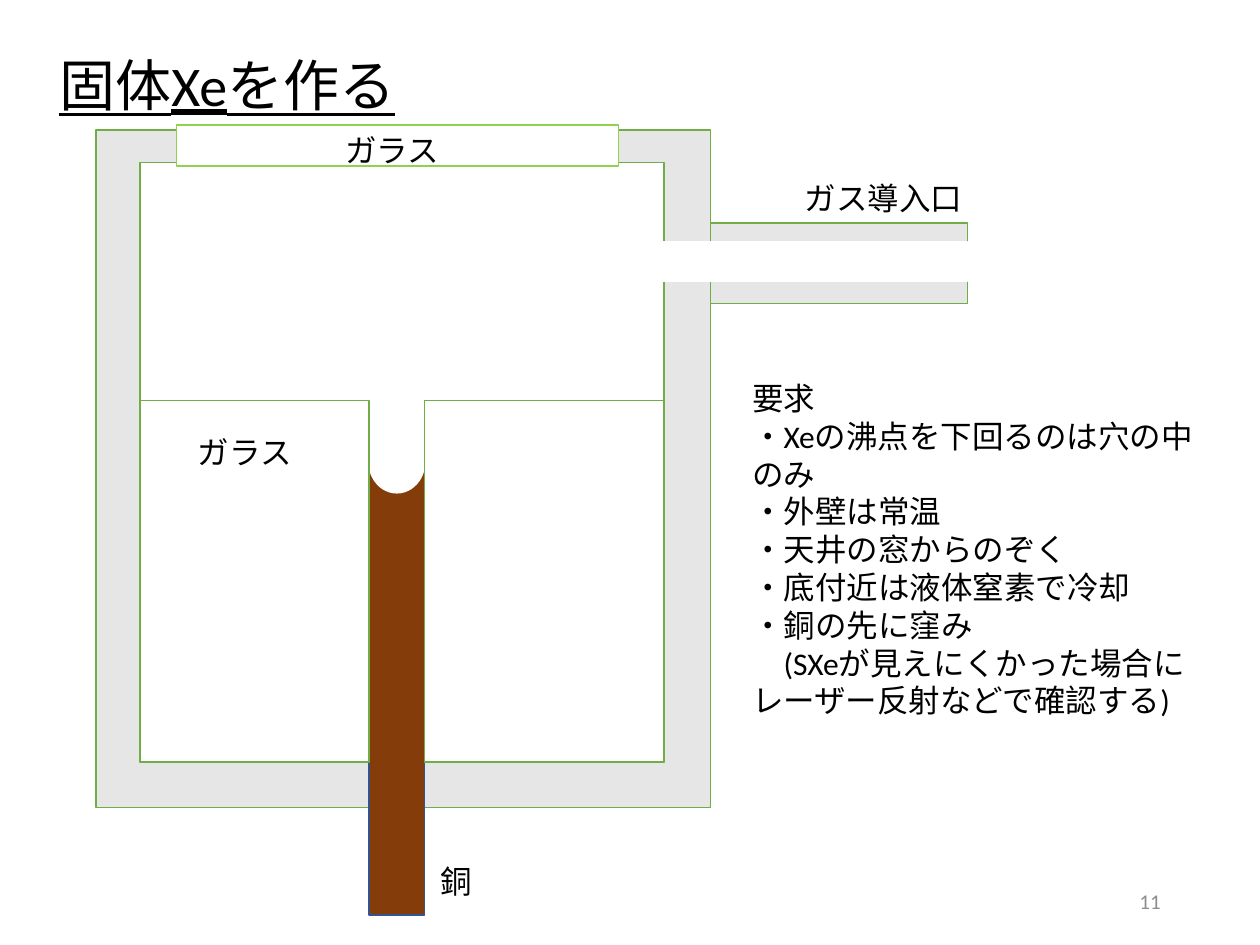
from typing import NamedTuple

from pptx import Presentation
from pptx.dml.color import RGBColor as Rgb
from pptx.enum.shapes import MSO_SHAPE as Kind
from pptx.enum.text import MSO_ANCHOR as Anchor, PP_ALIGN as Align
from pptx.util import Inches, Pt

HUES = {
    "wall": "E7E6E6", "white": "FFFFFF", "green": "70AD47", "lime": "92D050",
    "copper": "843C0B", "blue": "325491", "black": "000000", "gray": "8C8C8C",
}


class Part(NamedTuple):
    left: float
    top: float
    width: float
    height: float
    fill: str
    line: str = "green"
    kind: Kind = Kind.RECTANGLE


class Note(NamedTuple):
    left: float
    top: float
    width: float
    height: float
    lines: list[str]
    size: int = 18
    hue: str = "black"
    align: Align = Align.LEFT
    anchor: Anchor = Anchor.TOP


FLOOR = 6.05
SHELF = 3.18
INNER, RIGHT = 1.11, 5.27
ROD, BORE = 2.93, 0.44
EDGE = ROD + BORE

PARTS = [
    Part(5.37, 1.77, 2.31, 0.64, "wall"),
    Part(0.76, 1.03, 4.88, 5.38, "wall"),
    Part(INNER, 1.29, RIGHT - INNER, FLOOR - 1.29, "white"),
    Part(ROD, 3.75, BORE, 3.51, "copper", "blue"),
    Part(5.26, 1.92, 2.42, 0.31, "white", "white"),
    Part(ROD, 3.42, BORE, 0.49, "white", "white", Kind.OVAL),
    Part(INNER, SHELF, ROD - INNER, FLOOR - SHELF, "white"),
    Part(EDGE, SHELF, RIGHT - EDGE, FLOOR - SHELF, "white"),
    Part(1.4, 0.99, 3.51, 0.33, "white", "lime"),
]

NEEDS = [
    "要求",
    "・Xeの沸点を下回るのは穴の中のみ",
    "・外壁は常温",
    "・天井の窓からのぞく",
    "・底付近は液体窒素で冷却",
    "・銅の先に窪み",
    "　(SXeが見えにくかった場合にレーザー反射などで確認する)",
]

TITLE = Note(0.37, 0.35, 7.98, 0.64, ["固体Xeを作る"], 32)
NOTES = [
    Note(1.47, 3.39, 1.11, 0.4, ["ガラス"]),
    Note(2.64, 0.99, 1.11, 0.4, ["ガラス"]),
    Note(3.4, 6.79, 1.11, 0.4, ["銅"]),
    Note(5.87, 2.96, 3.72, 3.13, NEEDS),
    Note(7.06, 6.95, 2.25, 0.4, ["11"], 12, "gray", Align.RIGHT, Anchor.MIDDLE),
    Note(6.29, 1.37, 1.55, 0.4, ["ガス導入口"]),
]


def tint(name: str) -> Rgb:
    return Rgb.from_string(HUES[name])


def place(item: Part | Note) -> list[int]:
    return [Inches(size) for size in item[:4]]


def draw(slide, part: Part) -> None:
    shape = slide.shapes.add_shape(part.kind, *place(part))
    shape.shadow.inherit = False
    shape.fill.solid()
    shape.fill.fore_color.rgb = tint(part.fill)
    shape.line.color.rgb = tint(part.line)
    shape.line.width = Pt(1)


def write(box, note: Note) -> None:
    frame = box.text_frame
    frame.text = "\n".join(note.lines)
    frame.word_wrap = True
    frame.vertical_anchor = note.anchor
    for para in frame.paragraphs:
        para.alignment = note.align
        para.font.name = "Calibri"
        para.font.size = Pt(note.size)
        para.font.color.rgb = tint(note.hue)


def main() -> None:
    deck = Presentation()
    deck.slide_width, deck.slide_height = Inches(10), Inches(7.5)
    slide = deck.slides.add_slide(deck.slide_layouts[5])
    title = slide.shapes.title
    title.left, title.top, title.width, title.height = place(TITLE)
    write(title, TITLE)
    title.text_frame.paragraphs[0].font.underline = True
    for part in PARTS:
        draw(slide, part)
    for note in NOTES:
        write(slide.shapes.add_textbox(*place(note)), note)
    deck.save("out.pptx")


if __name__ == "__main__":
    main()
